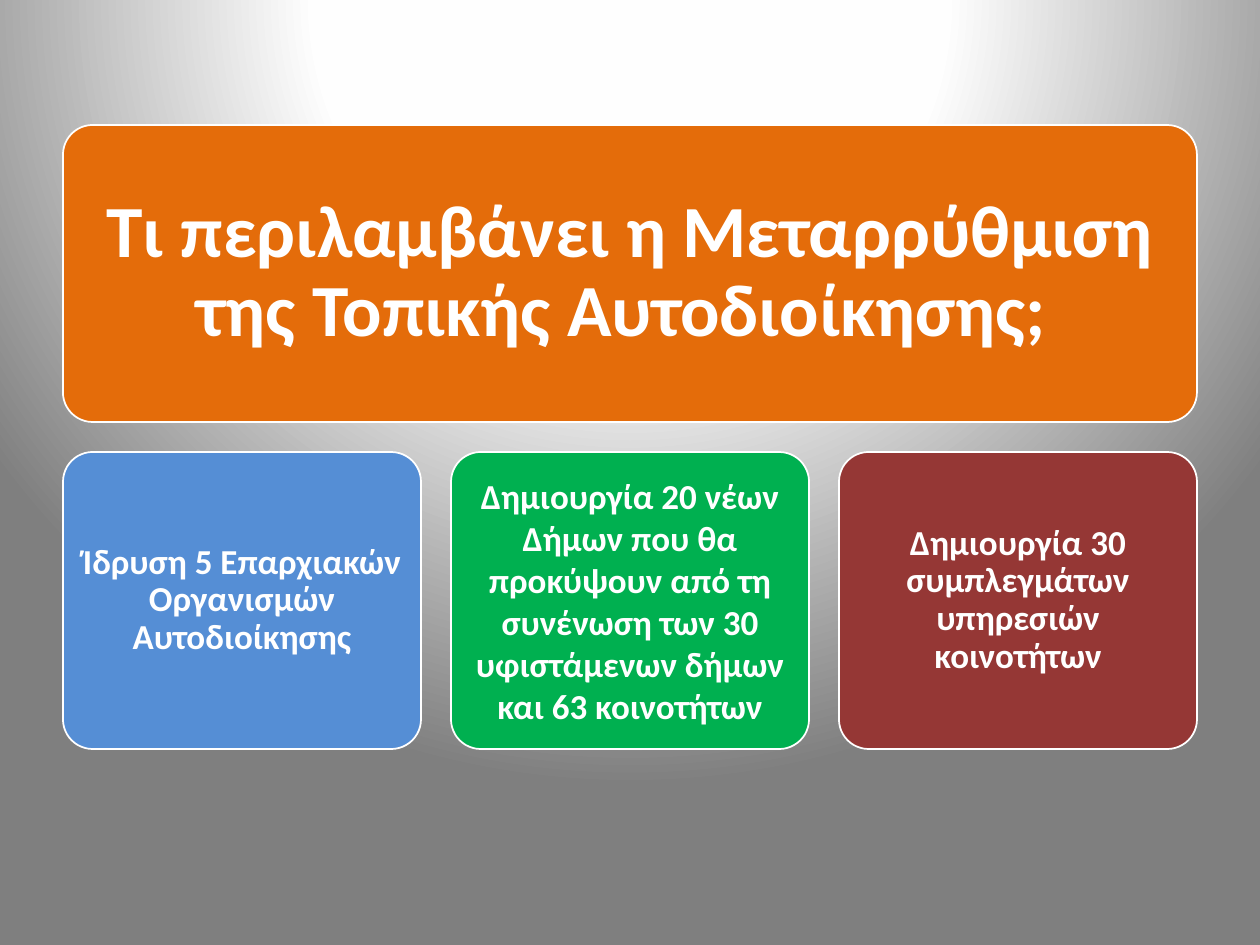
from dataclasses import dataclass
from lxml import etree
from pptx import Presentation
from pptx import util as u
from pptx.dml import color
from pptx.enum import shapes, text

PX = 914400 / 126
LEFT, TOP, GAP = 63, 125, 30
CARD_WIDTH, CARD_HEIGHT = 358, 297
FULL_WIDTH = 3 * CARD_WIDTH + 2 * GAP
TITLE_MARGIN = 9
COLOURS = {
    "white": "FFFFFF",
    "near_white": "FEFEFE",
    "grey": "7F7F7F",
    "orange": "E46C0A",
    "blue": "558ED5",
    "green": "00B050",
    "red": "953735",
}
BACKGROUND = f"""
<p:bg xmlns:p="http://schemas.openxmlformats.org/presentationml/2006/main"
      xmlns:a="http://schemas.openxmlformats.org/drawingml/2006/main">
  <p:bgPr>
    <a:gradFill rotWithShape="1">
      <a:gsLst>
        <a:gs pos="0"><a:srgbClr val="{COLOURS['white']}"/></a:gs>
        <a:gs pos="40000"><a:srgbClr val="{COLOURS['near_white']}"/></a:gs>
        <a:gs pos="100000"><a:srgbClr val="{COLOURS['grey']}"/></a:gs>
      </a:gsLst>
      <a:path path="circle">
        <a:fillToRect l="50000" t="-80000" r="50000" b="180000"/>
      </a:path>
    </a:gradFill>
    <a:effectLst/>
  </p:bgPr>
</p:bg>"""


@dataclass
class Card:
    words: str
    colour: str
    line_spacing: float = 0.9


TITLE = Card("Τι περιλαμβάνει η Μεταρρύθμιση της Τοπικής Αυτοδιοίκησης; ", "orange")
CARDS = [
    Card("Ίδρυση 5 Επαρχιακών Οργανισμών Αυτοδιοίκησης", "blue"),
    Card("Δημιουργία 20 νέων Δήμων που θα προκύψουν από τη συνένωση "
         "των 30 υφιστάμενων δήμων και 63 κοινοτήτων", "green", 1.0),
    Card("Δημιουργία 30 συμπλεγμάτων υπηρεσιών κοινοτήτων", "red"),
]


def emu(px: int) -> u.Emu:
    return u.Emu(round(px * PX))


def rgb(name: str) -> color.RGBColor:
    return color.RGBColor.from_string(COLOURS[name])


def write_words(box, card: Card, size: int, inset: int) -> None:
    frame = box.text_frame
    frame.word_wrap = True
    frame.auto_size = text.MSO_AUTO_SIZE.NONE
    frame.vertical_anchor = text.MSO_ANCHOR.MIDDLE
    frame.margin_left = frame.margin_right = emu(inset)
    frame.margin_top = frame.margin_bottom = emu(inset)
    para = frame.paragraphs[0]
    para.text = card.words
    para.alignment = text.PP_ALIGN.CENTER
    para.line_spacing = card.line_spacing
    para.font.name = "Calibri"
    para.font.size = u.Pt(size)
    para.font.bold = True
    para.font.color.rgb = rgb("white")


def add_card(page, left: int, top: int, width: int, colour: str):
    box = page.shapes.add_shape(
        shapes.MSO_SHAPE.ROUNDED_RECTANGLE,
        emu(left), emu(top), emu(width), emu(CARD_HEIGHT))
    box.adjustments[0] = 0.1
    box.shadow.inherit = False
    box.fill.solid()
    box.fill.fore_color.rgb = rgb(colour)
    box.line.color.rgb = rgb("white")
    box.line.width = u.Pt(1)
    return box


def add_title(page) -> None:
    card = add_card(page, LEFT, TOP, FULL_WIDTH, TITLE.colour)
    title = page.shapes.title
    title.left, title.top = emu(LEFT + TITLE_MARGIN), emu(TOP + TITLE_MARGIN)
    title.width = emu(FULL_WIDTH - 2 * TITLE_MARGIN)
    title.height = emu(CARD_HEIGHT - 2 * TITLE_MARGIN)
    write_words(title, TITLE, 42, 21)
    card._element.addnext(title._element)


def main() -> None:
    deck = Presentation()
    deck.slide_width, deck.slide_height = u.Inches(10), u.Inches(7.5)
    page = deck.slides.add_slide(deck.slide_layouts.get_by_name("Title Only"))
    page._element.cSld.insert(0, etree.fromstring(BACKGROUND))
    add_title(page)
    for index, card in enumerate(CARDS):
        left = LEFT + index * (CARD_WIDTH + GAP)
        box = add_card(page, left, TOP + CARD_HEIGHT + GAP, CARD_WIDTH, card.colour)
        write_words(box, card, 20, 10)
    deck.save("out.pptx")


if __name__ == "__main__":
    main()
